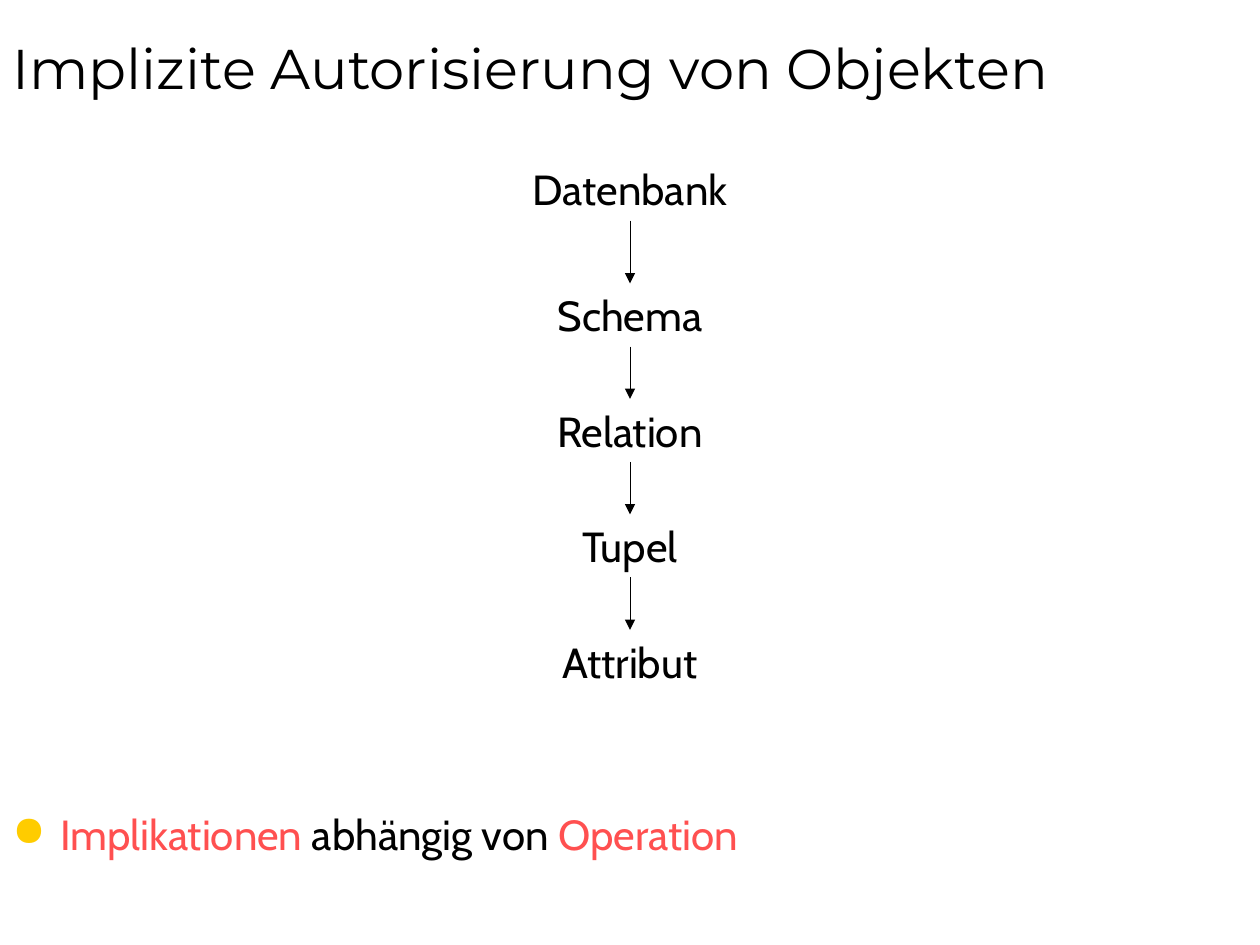
"""Build the slide on implicit authorisation of database objects."""
from dataclasses import dataclass

from lxml import etree
from pptx import Presentation
from pptx.dml.color import RGBColor
from pptx.enum.shapes import MSO_CONNECTOR
from pptx.enum.text import MSO_ANCHOR, PP_ALIGN
from pptx.oxml.ns import qn
from pptx.util import Inches, Pt

STRAIGHT = MSO_CONNECTOR.STRAIGHT
TOP, BOTTOM = MSO_ANCHOR.TOP, MSO_ANCHOR.BOTTOM
LEFT, CENTER = PP_ALIGN.LEFT, PP_ALIGN.CENTER
TOP_SITE, BOTTOM_SITE = 0, 2
COLORS = {"text": "000000", "accent": "FF5050", "bullet": "FFCC00"}
HEADING_FONT, BODY_FONT = "Montserrat", "Cabin"
LEVELS = ["Datenbank", "Schema", "Relation", "Tupel", "Attribut"]
FIRST_TOP, SECOND_TOP, LAST_TOP = 1.25, 2.25, 5.0
LEVEL_STEP = (LAST_TOP - SECOND_TOP) / (len(LEVELS) - 2)


@dataclass
class Span:
    text: str
    color: str = "text"


@dataclass
class TextBlock:
    left: float
    top: float
    width: float
    height: float
    spans: list[Span]
    font: str = BODY_FONT
    size: int = 24
    align: PP_ALIGN = LEFT
    anchor: MSO_ANCHOR = TOP


def add_text(slide, block: TextBlock):
    """Add a text box with one paragraph of coloured spans."""
    box = slide.shapes.add_textbox(
        Inches(block.left), Inches(block.top), Inches(block.width), Inches(block.height)
    )
    frame = box.text_frame
    frame.word_wrap = True
    frame.vertical_anchor = block.anchor
    para = frame.paragraphs[0]
    para.alignment = block.align
    for span in block.spans:
        run = para.add_run()
        run.text = span.text
        run.font.name = block.font
        run.font.size = Pt(block.size)
        run.font.color.rgb = RGBColor.from_string(COLORS[span.color])
    return box


def add_bullet(para, indent: float) -> None:
    """Give a paragraph a coloured bullet and a hanging indent."""
    properties = para._p.get_or_add_pPr()
    properties.set("marL", str(Inches(indent)))
    properties.set("indent", str(-Inches(indent)))
    color = etree.SubElement(properties, qn("a:buClr"))
    etree.SubElement(color, qn("a:srgbClr"), val=COLORS["bullet"])
    etree.SubElement(properties, qn("a:buChar"), char="●")


def add_arrow(slide, upper, lower) -> None:
    """Join two stacked boxes with a downward arrow."""
    arrow = slide.shapes.add_connector(STRAIGHT, 0, 0, 0, 0)
    arrow.begin_connect(upper, BOTTOM_SITE)
    arrow.end_connect(lower, TOP_SITE)
    arrow.line.width = Pt(0.5)
    arrow.line.color.rgb = RGBColor.from_string(COLORS["text"])
    etree.SubElement(arrow.line._get_or_add_ln(), qn("a:tailEnd"), type="triangle")
    etree.SubElement(arrow._element.spPr, qn("a:effectLst"))


def main() -> None:
    """Create the deck and save it."""
    deck = Presentation()
    deck.slide_width, deck.slide_height = Inches(10), Inches(7.5)
    slide = deck.slides.add_slide(deck.slide_layouts[6])

    title = [Span("Implizite Autorisierung von Objekten")]
    heading = add_text(
        slide, TextBlock(0, 0, 10, 0.83, title, HEADING_FONT, 32, anchor=BOTTOM)
    )
    heading.text_frame.margin_bottom = Inches(0.03)

    remark = [
        Span("Implikationen", "accent"),
        Span(" abhängig von "),
        Span("Operation", "accent"),
    ]
    remark_box = add_text(slide, TextBlock(0, 6.41, 10, 0.82, remark))
    remark_para = remark_box.text_frame.paragraphs[0]
    remark_para.line_spacing = 0.9
    add_bullet(remark_para, 0.38)

    tops = [FIRST_TOP] + [SECOND_TOP + LEVEL_STEP * step for step in range(len(LEVELS) - 1)]
    boxes = [
        add_text(slide, TextBlock(3.71, top, 2.58, 0.5, [Span(level)], align=CENTER))
        for level, top in zip(LEVELS, tops)
    ]
    for upper, lower in zip(boxes, boxes[1:]):
        add_arrow(slide, upper, lower)

    deck.save("out.pptx")


if __name__ == "__main__":
    main()
